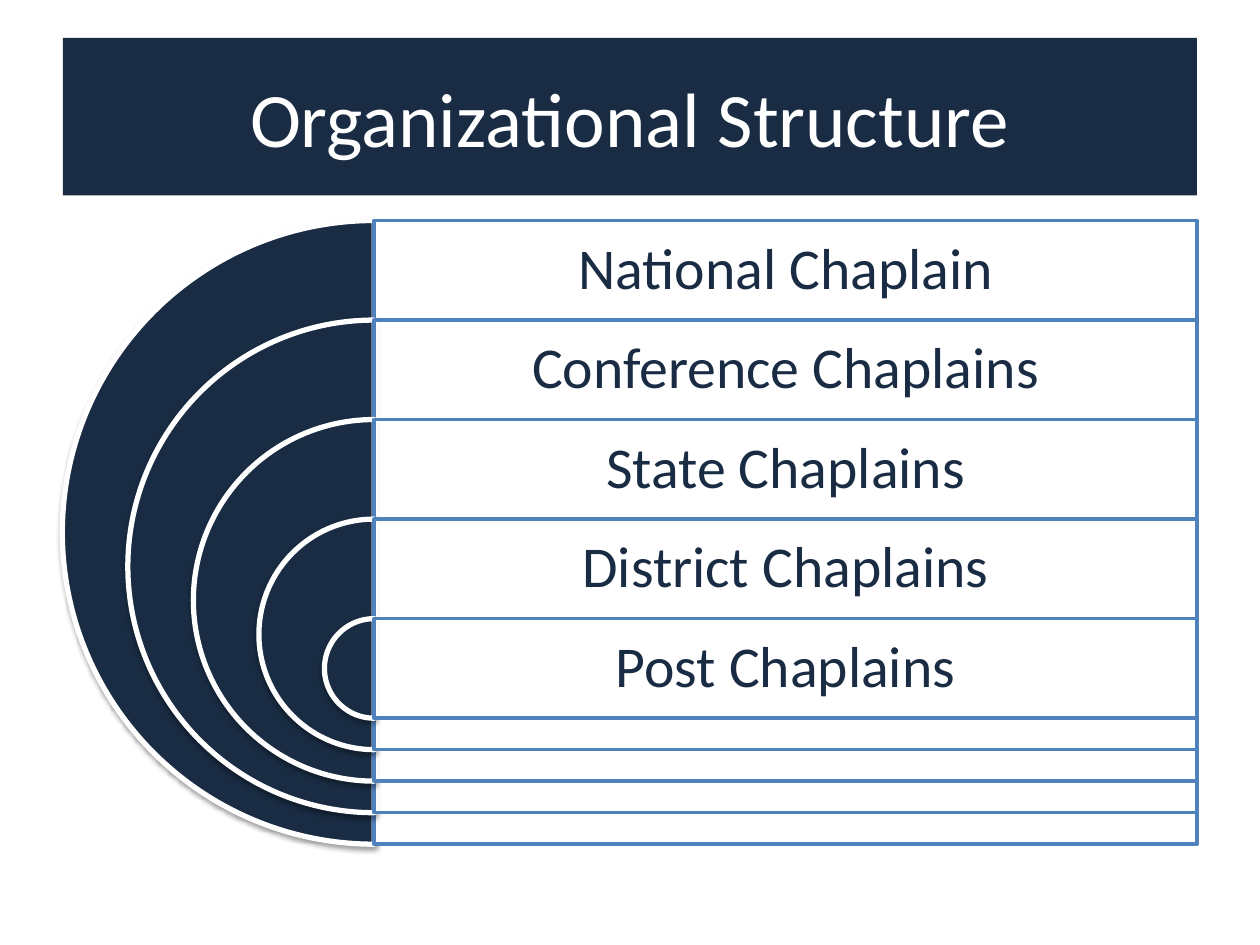
from pptx import Presentation
from pptx.dml.color import RGBColor
from pptx.enum.shapes import MSO_SHAPE
from pptx.enum.text import MSO_ANCHOR, PP_ALIGN
from pptx.oxml import parse_xml
from pptx.oxml.ns import nsdecls, qn
from pptx.util import Inches, Pt

RECT, PIE = MSO_SHAPE.RECTANGLE, MSO_SHAPE.PIE
MIDDLE, CENTER = MSO_ANCHOR.MIDDLE, PP_ALIGN.CENTER
NAVY, WHITE, BLUE = "192C43", "FFFFFF", "4F81BD"
SHADOW = (f'<a:outerShdw {nsdecls("a")} blurRad="39370" dist="20320" dir="5400000" '
          'rotWithShape="0"><a:srgbClr val="000000"><a:alpha val="38000"/>'
          '</a:srgbClr></a:outerShdw>')


def add_shape(kind, x, y, w, h, fill, line=None, line_width=0):
    s = slide.shapes.add_shape(kind, Inches(x), Inches(y), Inches(w), Inches(h))
    s.shadow.inherit = False
    s.fill.solid()
    s.fill.fore_color.rgb = RGBColor.from_string(fill)
    if line:
        s.line.color.rgb = RGBColor.from_string(line)
        s.line.width = Pt(line_width)
    else:
        s.line.fill.background()
    return s


def write(s, text, size, color):
    tf = s.text_frame
    tf.word_wrap = True
    tf.vertical_anchor = MIDDLE
    p = tf.paragraphs[0]
    p.alignment = CENTER
    r = p.add_run()
    r.text = text
    r.font.name = "Calibri"
    r.font.size = Pt(size)
    r.font.color.rgb = RGBColor.from_string(color)
    return tf


prs = Presentation()
prs.slide_width, prs.slide_height = Inches(10), Inches(7.5)
slide = prs.slides.add_slide(prs.slide_layouts[6])

# Title band
s = add_shape(RECT, 0.5, 0.3, 9, 1.25, NAVY)
write(s, "Organizational Structure", 44, WHITE)

# Nested half circles, each with a box and a label to its right
levels = ["National Chaplain", "Conference Chaplains", "State Chaplains",
          "District Chaplains", "Post Chaplains"]
center_x, box_width = 2.97, 6.53
top, row_height = 1.75, 0.79
largest, shrink = 4.95, 1.04

for i, level in enumerate(levels):
    y = top + i * row_height
    diameter = largest - i * shrink

    s = add_shape(PIE, center_x - diameter / 2, y, diameter, diameter, NAVY, WHITE, 3)
    s.adjustments[0], s.adjustments[1] = 54, 162  # left half: 90 to 270 degrees
    s._element.spPr.find(qn("a:effectLst")).append(parse_xml(SHADOW))

    s = add_shape(RECT, center_x, y, box_width, diameter, WHITE, BLUE, 2)
    if i > 0:  # boxes above the first are slightly transparent
        color = s._element.spPr.find(qn("a:solidFill"))[0]
        color.append(parse_xml(f'<a:alpha {nsdecls("a")} val="90000"/>'))

    s = slide.shapes.add_textbox(Inches(center_x), Inches(y),
                                 Inches(box_width), Inches(row_height))
    tf = write(s, level, 33, NAVY)
    tf.margin_left = tf.margin_right = Inches(0.14)
    tf.margin_top = tf.margin_bottom = Inches(0.14)
    tf.paragraphs[0].line_spacing = 0.9

prs.save("out.pptx")
